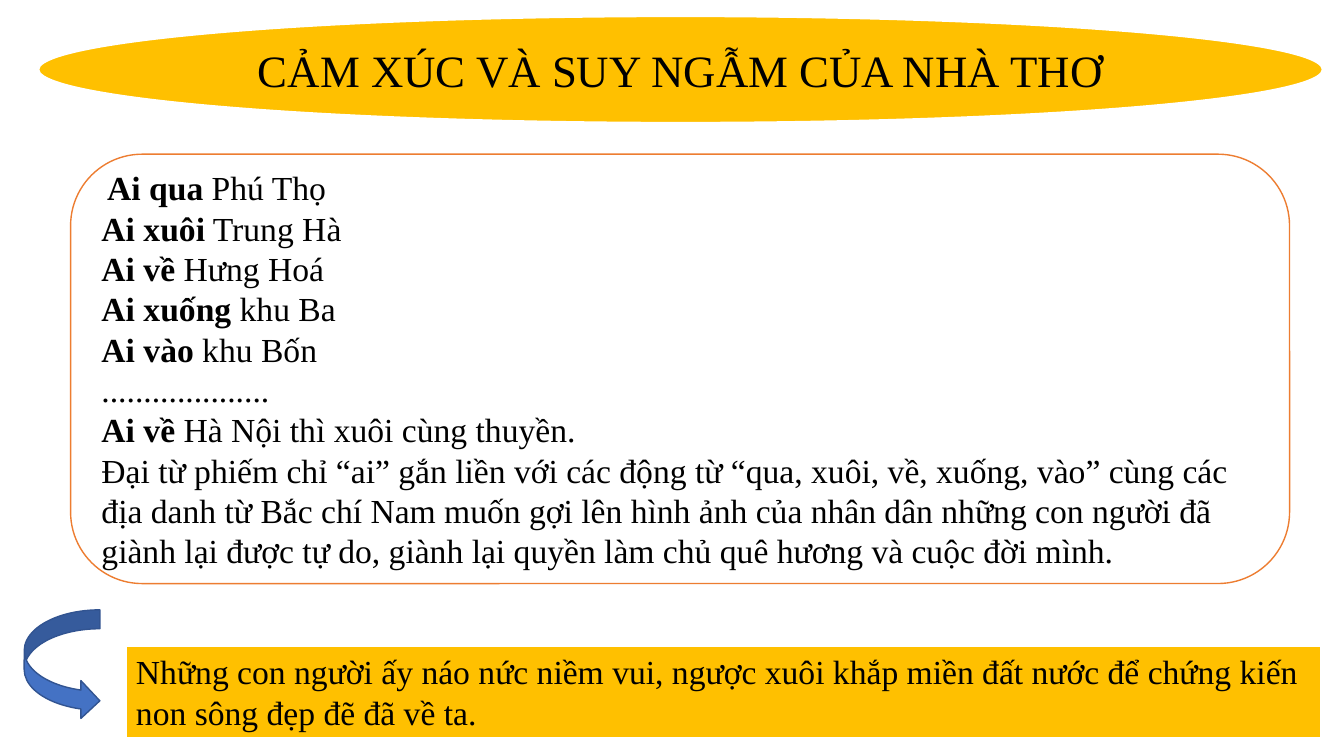
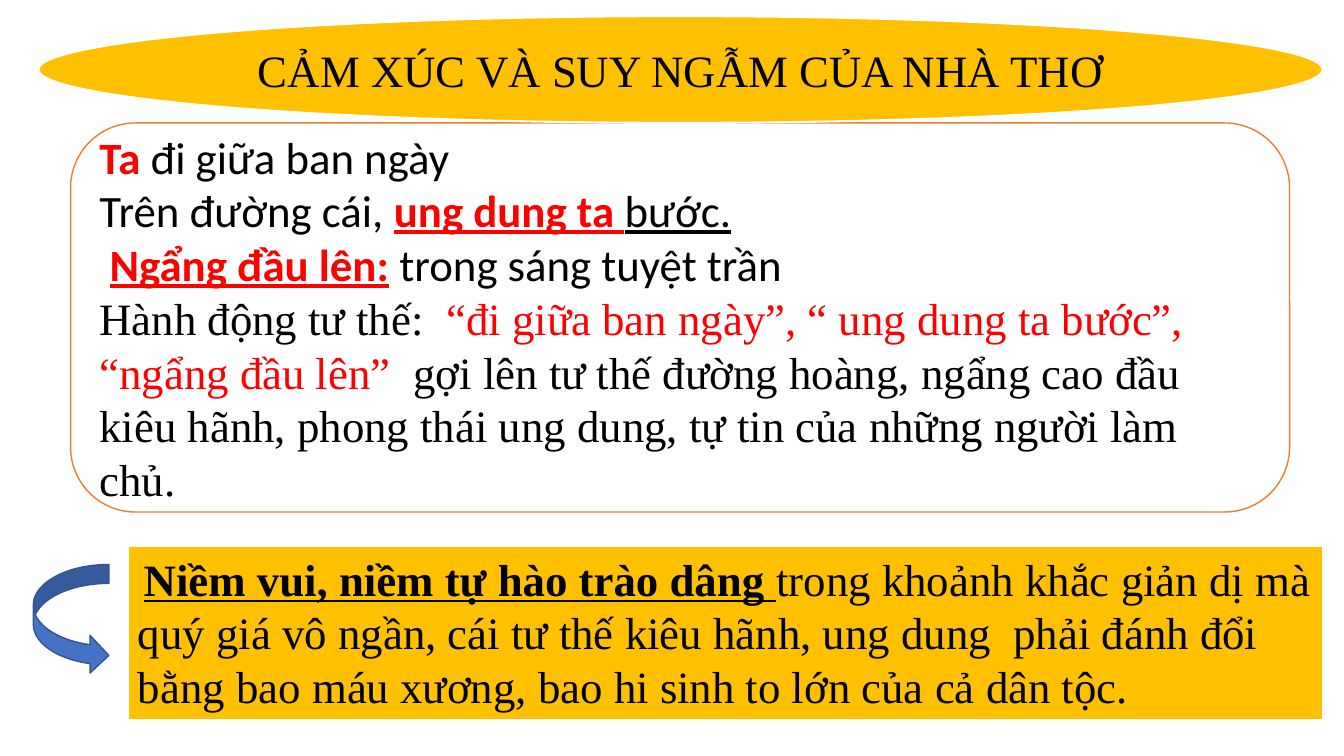
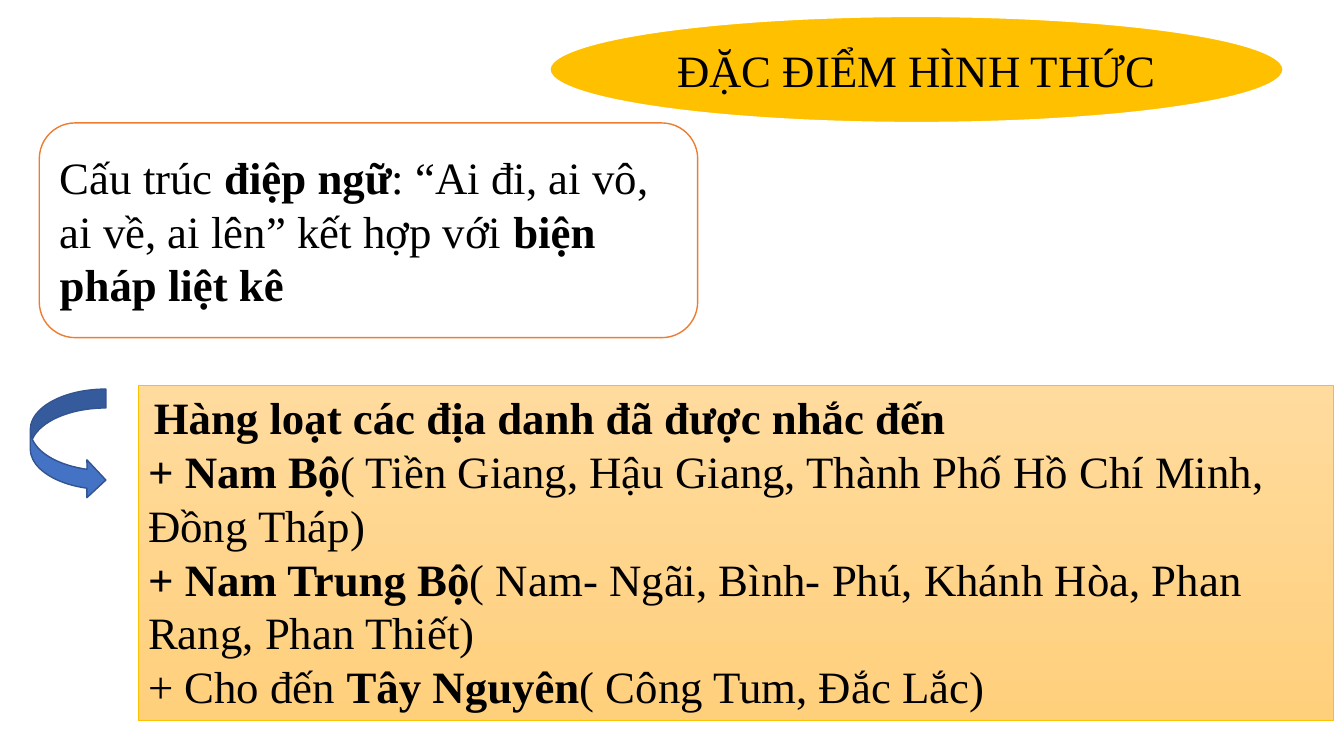
"""Builds three slides on a poem: a title oval, a quotation panel and a conclusion box."""
from pptx import Presentation
from pptx.dml.color import RGBColor
from pptx.enum.shapes import MSO_SHAPE
from pptx.enum.text import MSO_ANCHOR, MSO_AUTO_SIZE, PP_ALIGN
from pptx.util import Inches, Pt


class Theme:
    gold = RGBColor.from_string("FFC000")
    gold_top = RGBColor.from_string("FFDB9E")
    gold_bottom = RGBColor.from_string("FFD07C")
    orange = RGBColor.from_string("ED7D31")
    blue = RGBColor.from_string("4472C4")
    navy = RGBColor.from_string("325491")
    red = RGBColor.from_string("FF0000")
    black = RGBColor.from_string("000000")
    white = RGBColor.from_string("FFFFFF")
    serif = "Times New Roman"
    sans = "Calibri"
    large = 32
    medium = 24
    small = 18


def add_box(s, kind, box, fill, line, width):
    sp = s.shapes.add_shape(kind, *map(Inches, box))
    sp.shadow.inherit = False
    sp.fill.solid()
    sp.fill.fore_color.rgb = fill
    sp.line.color.rgb = line
    sp.line.width = Pt(width)
    return sp


def write(sp, paras, size, align=PP_ALIGN.LEFT, anchor=MSO_ANCHOR.MIDDLE):
    """Styles: b bold, u underlined, r red, c sans font, s small."""
    tf = sp.text_frame
    tf.word_wrap = True
    tf.auto_size = MSO_AUTO_SIZE.NONE
    tf.vertical_anchor = anchor
    for i, runs in enumerate(paras):
        p = tf.add_paragraph() if i else tf.paragraphs[0]
        p.alignment = align
        for text, style in runs:
            r = p.add_run()
            r.text = text
            r.font.name = Theme.sans if "c" in style else Theme.serif
            r.font.size = Pt(Theme.small if "s" in style else size)
            r.font.bold = "b" in style
            r.font.underline = "u" in style
            r.font.color.rgb = Theme.red if "r" in style else Theme.black


feelings = "CẢM XÚC VÀ SUY NGẪM CỦA NHÀ THƠ"
wide_oval = (0.38, 0.16, 12.74, 1.06)

slides = [
    dict(
        title=feelings, oval=wide_oval, size=Theme.medium,
        panel=(0.7, 1.53, 12.09, 4.26),
        quote=[
            [(" ", "bcs"), ("Ai qua", "b"), (" Phú Thọ", "")],
            [("Ai xuôi", "b"), (" Trung Hà", "")],
            [("Ai về", "b"), (" Hưng Hoá", "")],
            [("Ai xuống", "b"), (" khu Ba", "")],
            [("Ai vào", "b"), (" khu Bốn", "")],
            [("....................", "")],
            [("Ai về", "b"), (" Hà Nội thì xuôi cùng thuyền.", "")],
            [("Đại từ phiếm chỉ “ai” gắn liền với các động từ “qua, xuôi, về, xuống, vào” "
              "cùng các địa danh từ Bắc chí Nam muốn gợi lên hình ảnh của nhân dân những "
              "con người đã giành lại được tự do, giành lại quyền làm chủ quê hương và "
              "cuộc đời mình.", "")],
        ],
        arrow=(0.24, 6.05), result=(1.25, 6.41, 11.85, 0.91), gradient=False,
        conclusion=[
            [("Những con người ấy náo nức niềm vui, ngược xuôi khắp miền đất nước để "
              "chứng kiến non sông đẹp đẽ đã về ta.", "")],
        ],
    ),
    dict(
        title=feelings, oval=wide_oval, size=Theme.large,
        panel=(0.7, 1.22, 12.09, 3.86),
        quote=[
            [("Ta ", "bcr"), ("đi giữa ban ngày", "c")],
            [("Trên đường cái, ", "c"), ("ung dung ta ", "bcru"), ("bước.", "cu")],
            [(" ", "c"), ("Ngẩng đầu lên:", "bcru"), (" trong sáng tuyệt trần", "c")],
            [("Hành động tư thế:  ", ""),
             ("“đi giữa ban ngày”, “ ung dung ta bước”, “ngẩng đầu lên”", "r"),
             ("  gợi lên tư thế đường hoàng, ngẩng cao đầu kiêu hãnh, phong thái ung dung, "
              "tự tin của những người làm chủ.", "")],
        ],
        arrow=(0.33, 5.6), result=(1.27, 5.42, 11.85, 1.72), gradient=False,
        conclusion=[
            [(" ", "cs"), ("Niềm vui, niềm tự hào trào dâng ", "bu"),
             ("trong khoảnh khắc giản dị mà quý giá vô ngần, cái tư thế kiêu hãnh, ung dung  "
              "phải đánh đổi bằng bao máu xương, bao hi sinh to lớn của cả dân tộc.", "")],
        ],
    ),
    dict(
        title="ĐẶC ĐIỂM HÌNH THỨC", oval=(5.45, 0.16, 7.28, 1.06), size=Theme.large,
        panel=(0.39, 1.22, 6.53, 2.13),
        quote=[
            [("Cấu trúc ", ""), ("điệp ngữ", "b"),
             (": “Ai đi, ai vô, ai về, ai lên” kết hợp với ", ""),
             ("biện pháp liệt kê", "b")],
        ],
        arrow=(0.3, 3.86), result=(1.37, 3.82, 11.85, 3.33), gradient=True,
        conclusion=[
            [(" ", "cs"), ("Hàng loạt các địa danh đã được nhắc đến", "b")],
            [("+ Nam Bộ", "b"),
             ("( Tiền Giang, Hậu Giang, Thành Phố Hồ Chí Minh, Đồng Tháp)", "")],
            [("+ Nam Trung Bộ", "b"),
             ("( Nam- Ngãi, Bình- Phú, Khánh Hòa, Phan Rang, Phan Thiết)", "")],
            [("+ Cho đến ", ""), ("Tây Nguyên", "b"), ("( Công Tum, Đắc Lắc)", "")],
        ],
    ),
]

prs = Presentation()
prs.slide_width, prs.slide_height = Inches(13.33), Inches(7.5)

for d in slides:
    s = prs.slides.add_slide(prs.slide_layouts[5])

    panel = add_box(s, MSO_SHAPE.ROUNDED_RECTANGLE, d["panel"], Theme.white, Theme.orange, 1)
    write(panel, d["quote"], d["size"])

    result = add_box(s, MSO_SHAPE.RECTANGLE, d["result"], Theme.gold, Theme.white, 1.5)
    if d["gradient"]:
        result.fill.gradient()
        result.fill.gradient_angle = 270
        for stop, color in zip(result.fill.gradient_stops, (Theme.gold_top, Theme.gold_bottom)):
            stop.color.rgb = color
        result.line.color.rgb = Theme.gold
        result.line.width = Pt(0.5)
    write(result, d["conclusion"], d["size"], anchor=MSO_ANCHOR.TOP)

    add_box(s, MSO_SHAPE.CURVED_RIGHT_ARROW, (*d["arrow"], 0.75, 1.09), Theme.blue, Theme.navy, 1)

    add_box(s, MSO_SHAPE.OVAL, d["oval"], Theme.gold, Theme.white, 1.5)
    title = s.shapes.title
    title.left, title.top, title.width, title.height = map(Inches, d["oval"])
    write(title, [[(d["title"], "")]], Theme.large, PP_ALIGN.CENTER)
    s.shapes.element.append(title.element)

prs.save("out.pptx")
